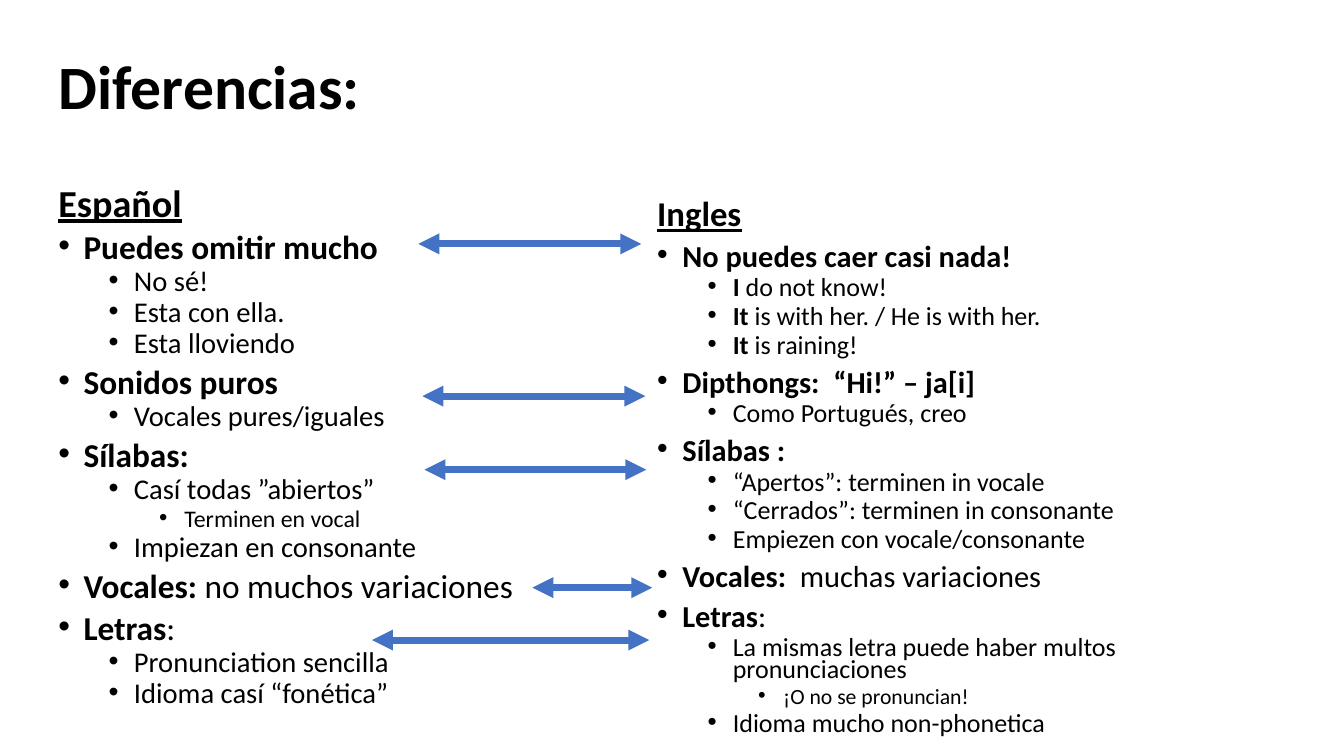
from dataclasses import dataclass

from lxml import etree
from pptx import Presentation
from pptx.dml.color import RGBColor
from pptx.enum.shapes import MSO_CONNECTOR
from pptx.enum.text import MSO_ANCHOR, MSO_AUTO_SIZE, PP_ALIGN
from pptx.oxml.ns import qn
from pptx.util import Inches, Pt

STRAIGHT = MSO_CONNECTOR.STRAIGHT
MIDDLE = MSO_ANCHOR.MIDDLE
NO_AUTOFIT = MSO_AUTO_SIZE.NONE
LEFT = PP_ALIGN.LEFT


@dataclass(frozen=True)
class Theme:
    font: str = "Calibri"
    ink: RGBColor = RGBColor(0x00, 0x00, 0x00)
    arrow: RGBColor = RGBColor(0x44, 0x72, 0xC4)
    title_size: float = 44
    spanish_sizes: tuple = (27.2, 23.8, 20.4, 17)
    english_sizes: tuple = (24.8, 21.7, 18.6, 15.5)


theme = Theme()


def style_run(run, size, bold):
    run.font.name = theme.font
    run.font.size = Pt(size)
    run.font.color.rgb = theme.ink
    run.font.bold = bold


def add_outline(slide, box, sizes, outline):
    frame = slide.shapes.add_textbox(*map(Inches, box)).text_frame
    frame.word_wrap = True
    for index, (depth, bold_text, plain_text) in enumerate(outline):
        paragraph = frame.add_paragraph() if index else frame.paragraphs[0]
        paragraph.line_spacing = 0.7
        if depth:
            paragraph.level = depth - 1
            paragraph.space_before = Pt(10 if depth == 1 else 5)
            properties = paragraph._p.get_or_add_pPr()
            properties.set("marL", str(Inches(0.25 + 0.5 * (depth - 1))))
            properties.set("indent", str(Inches(-0.25)))
            etree.SubElement(properties, qn("a:buFont")).set("typeface", "Arial")
            etree.SubElement(properties, qn("a:buChar")).set("char", "•")
        for text, bold in ((bold_text, True), (plain_text, False)):
            if text:
                run = paragraph.add_run()
                run.text = text
                style_run(run, sizes[depth], bold)
                run.font.underline = depth == 0


spanish = [
    (0, "Español", ""),
    (1, "Puedes omitir mucho", ""),
    (2, "", "No sé!"),
    (2, "", "Esta con ella."),
    (2, "", "Esta lloviendo"),
    (1, "Sonidos puros", ""),
    (2, "", "Vocales pures/iguales"),
    (1, "Sílabas:", ""),
    (2, "", "Casí todas ”abiertos”"),
    (3, "", "Terminen en vocal"),
    (2, "", "Impiezan en consonante"),
    (1, "Vocales: ", "no muchos variaciones"),
    (1, "Letras", ":"),
    (2, "", "Pronunciation sencilla"),
    (2, "", "Idioma casí “fonética”"),
]
english = [
    (0, "Ingles", ""),
    (1, "No puedes caer casi nada!", ""),
    (2, "I", " do not know!"),
    (2, "It", " is with her. / He is with her."),
    (2, "It ", "is raining!"),
    (1, "Dipthongs:  “Hi!” – ja[i]", ""),
    (2, "", "Como Portugués, creo"),
    (1, "Sílabas :", ""),
    (2, "", "“Apertos”: terminen in vocale"),
    (2, "", "“Cerrados”: terminen in consonante"),
    (2, "", "Empiezen con vocale/consonante"),
    (1, "Vocales:  ", "muchas variaciones"),
    (1, "Letras", ":"),
    (2, "", "La mismas letra puede haber multos pronunciaciones"),
    (3, "", "¡O no se pronuncian!"),
    (2, "", "Idioma mucho non-phonetica"),
]
contrasts = [
    (4.15, 6.36, 2.42),
    (4.19, 6.4, 3.93),
    (4.21, 6.41, 4.66),
    (5.28, 6.47, 5.83),
    (3.69, 6.44, 6.35),
]

presentation = Presentation()
presentation.slide_width = Inches(13.33)
presentation.slide_height = Inches(7.5)
slide = presentation.slides.add_slide(presentation.slide_layouts[5])

title = slide.shapes.title
title.left, title.top = Inches(0.48), Inches(0.16)
title.width, title.height = Inches(3.38), Inches(1.45)
title.text_frame.text = "Diferencias:"
title.text_frame.auto_size = NO_AUTOFIT
title.text_frame.vertical_anchor = MIDDLE
heading = title.text_frame.paragraphs[0]
heading.alignment = LEFT
heading.line_spacing = 0.9
style_run(heading.runs[0], theme.title_size, True)

add_outline(slide, (0.48, 1.85, 5.21, 5.49), theme.spanish_sizes, spanish)
add_outline(slide, (6.42, 1.97, 6.43, 5.57), theme.english_sizes, english)

for start, end, height in contrasts:
    arrow = slide.shapes.add_connector(
        STRAIGHT, Inches(start), Inches(height), Inches(end), Inches(height)
    )
    arrow.line.color.rgb = theme.arrow
    arrow.line.width = Pt(5)
    line = arrow.line._get_or_add_ln()
    for tip in ("a:headEnd", "a:tailEnd"):
        etree.SubElement(line, qn(tip)).set("type", "triangle")
    etree.SubElement(arrow._element.spPr, qn("a:effectLst"))

presentation.save("out.pptx")
